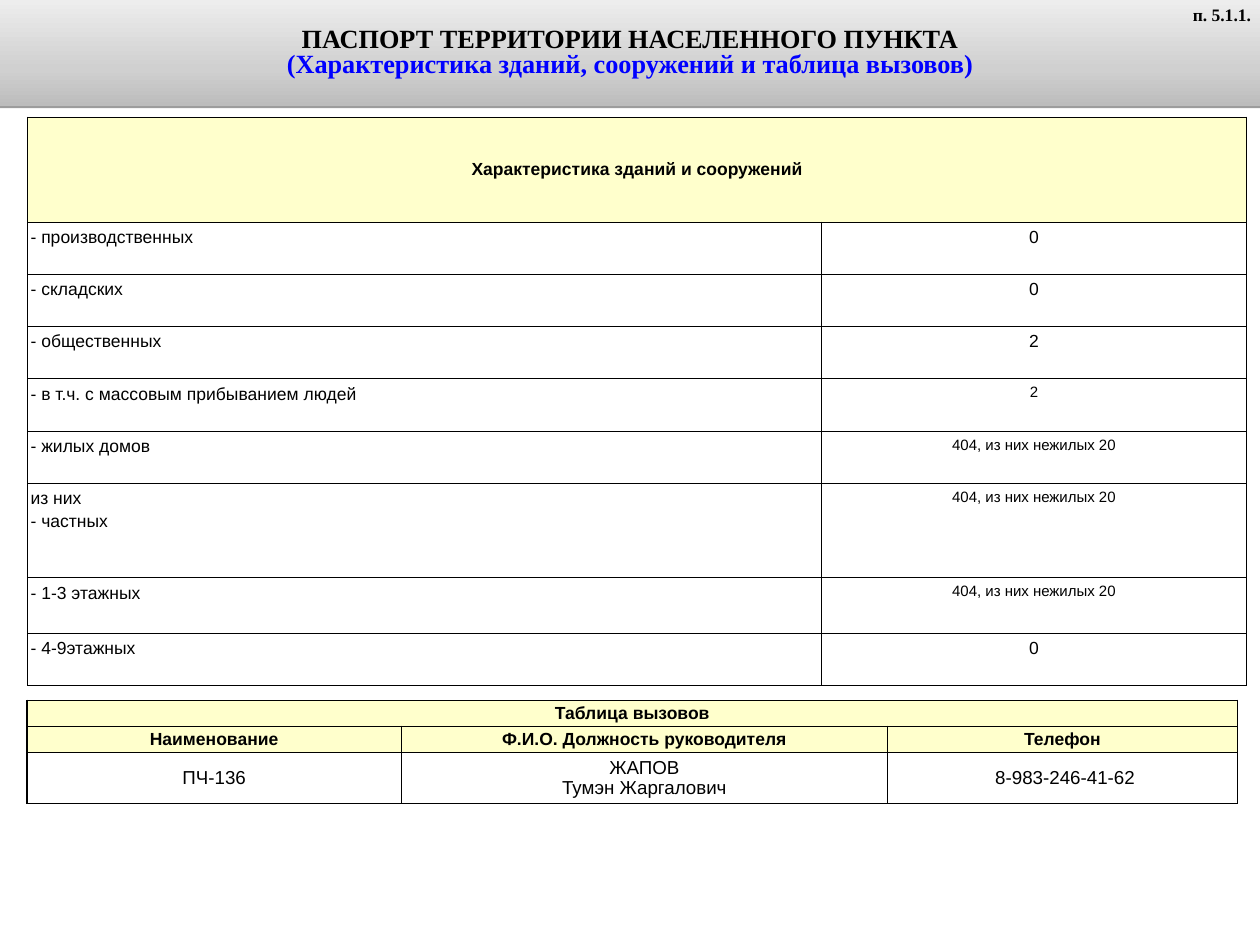
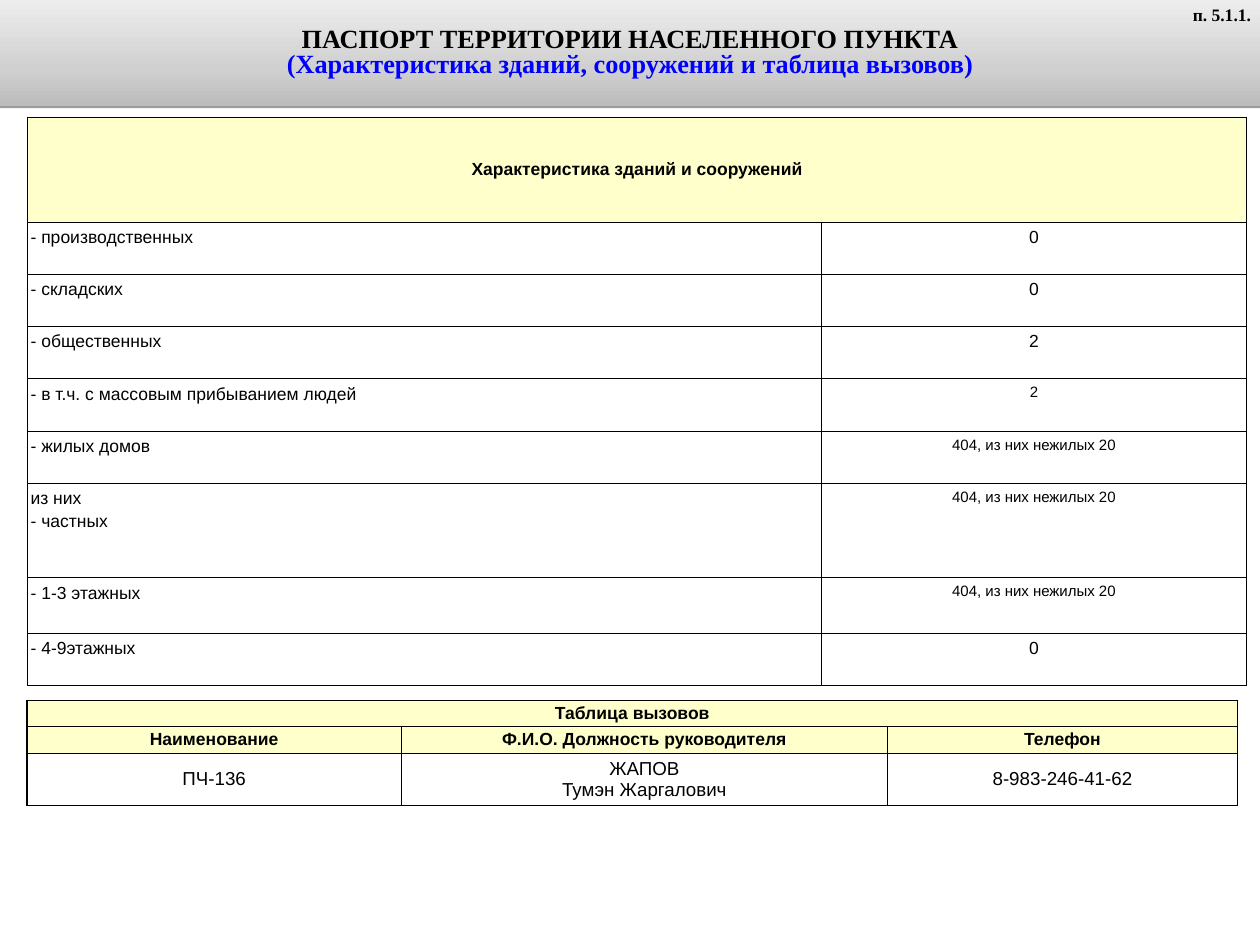
from dataclasses import dataclass

from lxml import etree
from pptx import Presentation
from pptx import util as u
from pptx.dml.color import RGBColor
from pptx.enum import shapes, text
from pptx.oxml import parse_xml
from pptx.oxml.ns import nsdecls, qn

HUES = {
    "ink": "000000",
    "blue": "0000FF",
    "cream": "FFFFCC",
    "white": "FFFFFF",
    "dark": "BCBCBC",
    "mid": "D0D0D0",
    "light": "EDEDED",
}
SANS, SERIF = "Arial", "Times New Roman"
LEFT, MID, RIGHT = text.PP_ALIGN.LEFT, text.PP_ALIGN.CENTER, text.PP_ALIGN.RIGHT
SIDES = ("L", "R", "T", "B")


@dataclass(frozen=True)
class Style:
    size: int
    face: str = SANS
    bold: bool = False
    align: text.PP_ALIGN = MID
    hue: str = "ink"
    lead: float | None = None
    gap: float = 0


@dataclass(frozen=True)
class Cell:
    words: str
    style: Style
    fill: str = "white"
    pad: tuple[float, float] = (0.03, 0.06)
    center: bool = False
    edges: tuple[float, ...] = (1, 1, 1, 1)


@dataclass(frozen=True)
class Grid:
    left: float
    top: float
    cols: tuple[float, ...]
    rows: tuple[float, ...]
    cells: list[list[Cell]]


TITLE = Style(21, SERIF, True, lead=0.8)
SUB = Style(21, SERIF, True, hue="blue", lead=0.8)
MARK = Style(14, SERIF, True, RIGHT)
HEAD = Style(14, bold=True)
LABEL = Style(14, align=LEFT, gap=2.8)
COUNT, NOTE, CALL = Style(14), Style(12), Style(15)

HOMES = "404, из них нежилых 20"
STOCK = [
    ("- производственных", "0", COUNT),
    ("- складских", "0", COUNT),
    ("- общественных", "2", COUNT),
    ("- в т.ч. с массовым прибыванием людей", "2", NOTE),
    ("- жилых домов", HOMES, NOTE),
    ("из них\n- частных", HOMES, NOTE),
    ("- 1-3 этажных", HOMES, NOTE),
    ("- 4-9этажных", "0", COUNT),
]
# The first slide sets its phone number one space to the right.
PHONES = (" 8-983-246-41-62", "8-983-246-41-62")


def color(name: str) -> RGBColor:
    return RGBColor.from_string(HUES[name])


def write(frame, lines: list[tuple[str, Style]]) -> None:
    """Put one styled paragraph per line; gaps go between paragraphs."""
    for i, (words, style) in enumerate(lines):
        para = frame.add_paragraph() if i else frame.paragraphs[0]
        para.text = words
        para.alignment = style.align
        if style.lead:
            para.line_spacing = style.lead
        if i and style.gap:
            para.space_before = u.Pt(style.gap)
        font = para.font
        font.name, font.size, font.bold = style.face, u.Pt(style.size), style.bold
        font.color.rgb = color(style.hue)


def edge(cell, side: str, width: float) -> None:
    props = cell._tc.get_or_add_tcPr()
    line = etree.SubElement(props, qn(f"a:ln{side}"), w=str(u.Pt(width)))
    fill = etree.SubElement(line, qn("a:solidFill"))
    etree.SubElement(fill, qn("a:srgbClr"), val=HUES["ink"])


def paint(cell, data: Cell) -> None:
    for side, width in zip(SIDES, data.edges):
        edge(cell, side, width)
    cell.fill.solid()
    cell.fill.fore_color.rgb = color(data.fill)
    across, down = data.pad
    cell.margin_left = cell.margin_right = u.Inches(across)
    cell.margin_top = cell.margin_bottom = u.Inches(down)
    anchor = text.MSO_ANCHOR
    cell.vertical_anchor = anchor.MIDDLE if data.center else anchor.TOP
    write(cell.text_frame, [(part, data.style) for part in data.words.split("\n")])


def draw(slide, grid: Grid) -> None:
    """Draw a table; a row with a single cell spans every column."""
    table = slide.shapes.add_table(
        len(grid.rows), len(grid.cols), u.Inches(grid.left), u.Inches(grid.top),
        u.Inches(sum(grid.cols)), u.Inches(sum(grid.rows))).table
    table.first_row = table.horz_banding = False
    for col, width in zip(table.columns, grid.cols):
        col.width = u.Inches(width)
    for row, height in zip(table.rows, grid.rows):
        row.height = u.Inches(height)
    last = len(grid.cols) - 1
    for r, line in enumerate(grid.cells):
        if len(line) == 1:
            table.cell(r, 0).merge(table.cell(r, last))
        for c, data in enumerate(line):
            paint(table.cell(r, c), data)


def stock() -> Grid:
    """Table of buildings."""
    cells = [[Cell("Характеристика зданий и сооружений", HEAD, "cream",
                   center=True, edges=(1, 0.5, 0.5, 1))]]
    for name, value, style in STOCK:
        cells.append([Cell(name, LABEL), Cell(value, style, edges=(1, 0.5, 1, 1))])
    rows = (1.17, *[0.58] * 5, 1.05, 0.62, 0.58)
    return Grid(0.31, 1.3, (8.82, 4.72), rows, cells)


def calls(phone: str) -> Grid:
    """Table of emergency contacts."""
    def head(words: str) -> Cell:
        return Cell(words, HEAD, "cream", (0.03, 0.03), True)

    names = ("Наименование", "Ф.И.О. Должность руководителя", "Телефон")
    facts = ("ПЧ-136", "ЖАПОВ\nТумэн Жаргалович", phone)
    cells = [
        [head("Таблица вызовов")],
        [head(name) for name in names],
        [Cell(fact, CALL, pad=(0.04, 0.04), center=True) for fact in facts],
    ]
    return Grid(0.3, 7.78, (4.16, 5.4, 3.89), (0.29, 0.29, 0.57), cells)


def band(slide) -> None:
    """Draw the title band with its gradient and shadow."""
    box = slide.shapes.add_shape(
        shapes.MSO_SHAPE.RECTANGLE, 0, 0, u.Inches(14), u.Inches(1.18))
    box.line.fill.background()
    box.shadow.inherit = False
    props = box._element.spPr
    stops = "".join(
        f'<a:gs pos="{spot * 1000}"><a:srgbClr val="{HUES[name]}"/></a:gs>'
        for spot, name in ((0, "dark"), (35, "mid"), (100, "light")))
    props.find(qn("a:prstGeom")).addnext(parse_xml(
        f'<a:gradFill {nsdecls("a")} rotWithShape="1"><a:gsLst>{stops}</a:gsLst>'
        '<a:lin ang="16200000" scaled="1"/></a:gradFill>'))
    props.find(qn("a:effectLst")).append(parse_xml(
        f'<a:outerShdw {nsdecls("a")} blurRad="0" dist="{u.Pt(1.6)}" dir="5400000" '
        f'rotWithShape="0"><a:srgbClr val="{HUES["ink"]}"><a:alpha val="38000"/>'
        '</a:srgbClr></a:outerShdw>'))
    frame = box.text_frame
    frame.word_wrap = True
    frame.vertical_anchor = text.MSO_ANCHOR.MIDDLE
    write(frame, [
        ("ПАСПОРТ ТЕРРИТОРИИ НАСЕЛЕННОГО ПУНКТА", TITLE),
        ("(Характеристика зданий, сооружений и таблица вызовов)", SUB),
    ])


def mark(slide) -> None:
    """Write the clause number in the top right corner."""
    box = slide.shapes.add_textbox(
        u.Inches(13.06), 0, u.Inches(0.94), u.Inches(0.33))
    frame = box.text_frame
    frame.word_wrap = True
    frame.auto_size = text.MSO_AUTO_SIZE.SHAPE_TO_FIT_TEXT
    write(frame, [("п. 5.1.1.", MARK)])


def main() -> None:
    deck = Presentation()
    deck.slide_width, deck.slide_height = u.Inches(14), u.Inches(10.5)
    for phone in PHONES:
        slide = deck.slides.add_slide(deck.slide_layouts[6])
        draw(slide, stock())
        band(slide)
        draw(slide, calls(phone))
        mark(slide)
    deck.save("out.pptx")


if __name__ == "__main__":
    main()
